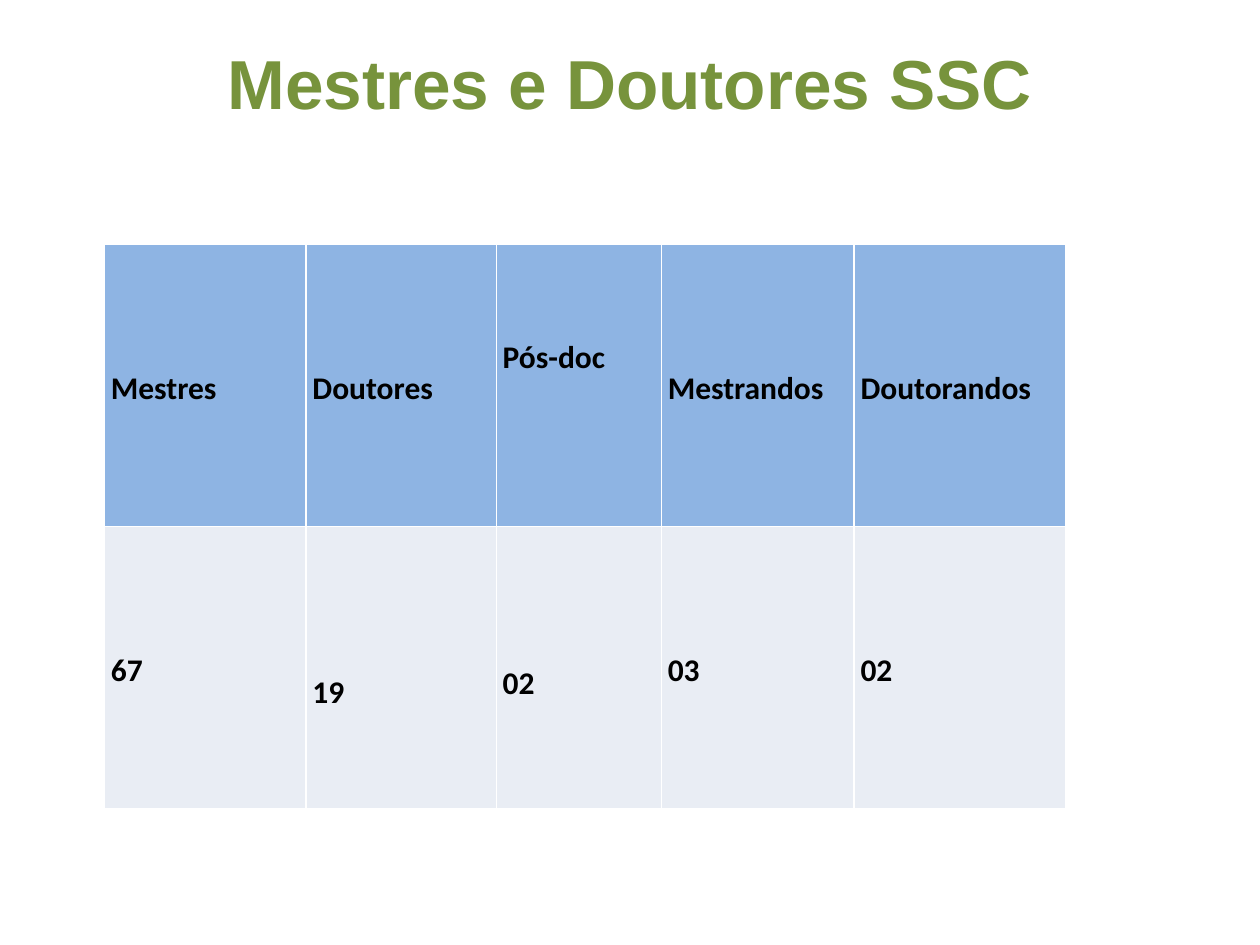
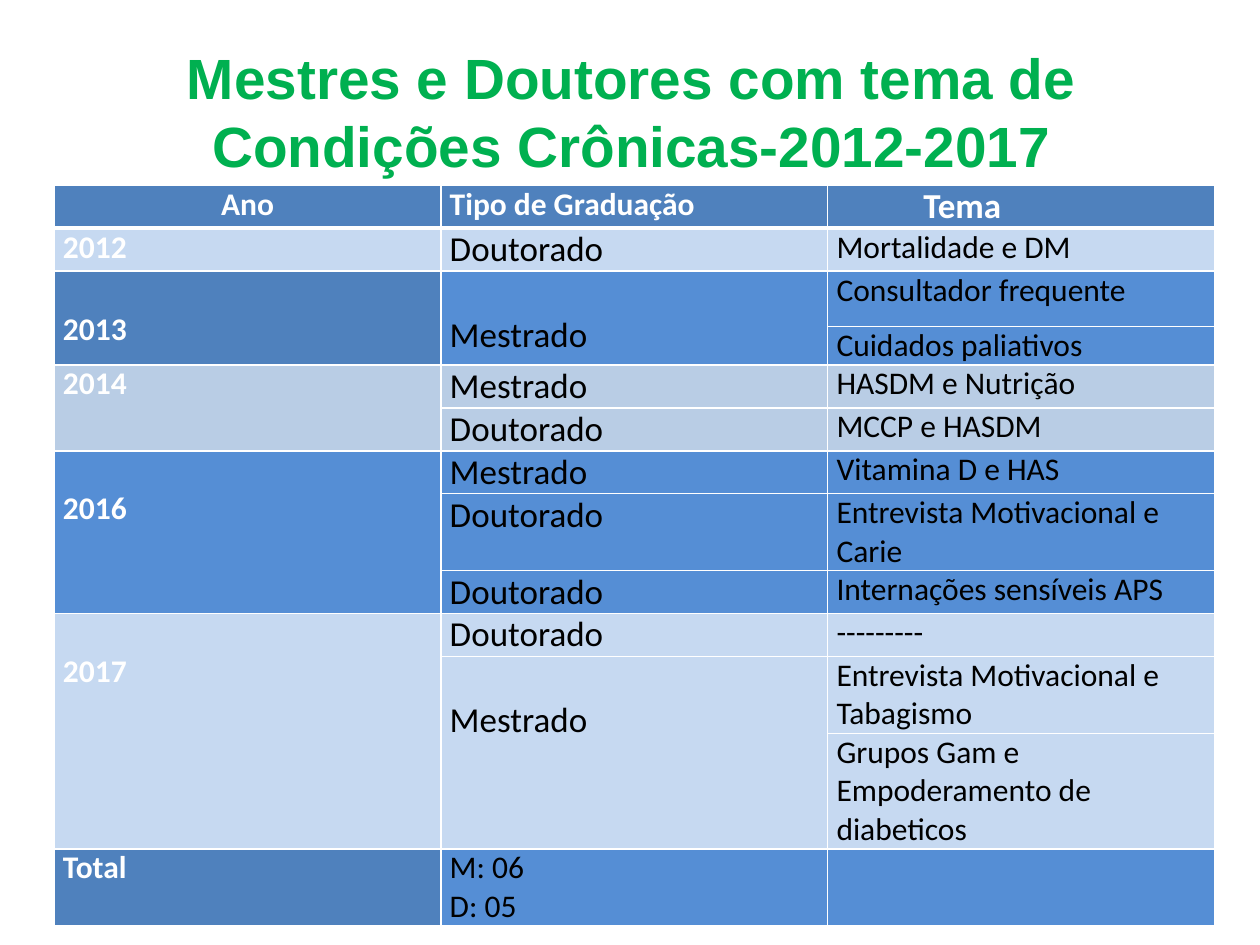
from dataclasses import dataclass

from lxml import etree
from pptx import Presentation
from pptx import util as u
from pptx.dml.color import RGBColor
from pptx.enum import text
from pptx.oxml import ns

Inches = u.Inches

COLORS = {
    "olive": "77933C", "green": "00B050", "white": "FFFFFF", "black": "000000",
    "sky": "8EB4E3", "mist": "E9EDF4", "steel": "4F81BD",
    "pale": "C6D9F1", "blue": "558ED5", "grey_blue": "B9CDE5",
}
TITLE_FONT, TABLE_FONT = "Arial", "Calibri"
LINE_18, LINE_20 = 0.31, 0.34  # heights of one line of table text
SPACED_LINE = 0.35  # one 18 point line at 1.15 spacing


@dataclass
class Title:
    words: str
    left: float
    top: float
    size: float
    color: str
    drop: float


@dataclass
class Cell:
    row: int
    col: int
    words: str
    fill: str
    size: float = 18
    color: str = "black"
    bold: bool = False
    rows: int = 1
    drop: float = 0
    indent: float = 0
    spacing: float = 1.0
    align: text.PP_ALIGN = text.PP_ALIGN.LEFT
    anchor: text.MSO_ANCHOR = text.MSO_ANCHOR.TOP
    under: float = 1


@dataclass
class Grid:
    left: float
    top: float
    widths: list[float]
    heights: list[float]
    inset: float
    cells: list[Cell]


def apply(target, formats: dict) -> None:
    for name, value in formats.items():
        setattr(target, name, value)


def style_font(font, name: str, size: float, color: str, bold: bool) -> None:
    apply(font, {"name": name, "size": u.Pt(size), "bold": bold})
    font.color.rgb = RGBColor.from_string(COLORS[color])


def add_page(deck, title: Title):
    page = deck.slides.add_slide(deck.slide_layouts[5])
    box = page.shapes.title
    apply(box, {"left": Inches(title.left), "top": Inches(title.top),
                "width": Inches(9), "height": Inches(1.25)})
    frame = box.text_frame
    apply(frame, {"word_wrap": True, "auto_size": text.MSO_AUTO_SIZE.NONE,
                  "vertical_anchor": text.MSO_ANCHOR.TOP,
                  "margin_top": Inches(title.drop), "margin_bottom": 0})
    para = frame.paragraphs[0]
    para.alignment = text.PP_ALIGN.CENTER
    span = para.add_run()
    span.text = title.words
    style_font(span.font, TITLE_FONT, title.size, title.color, True)
    return page


def add_borders(table_cell, under: float) -> None:
    """White lines on all four sides; they must precede the fill."""
    properties = table_cell._tc.get_or_add_tcPr()
    sides = {"lnL": 1, "lnR": 1, "lnT": 1, "lnB": under}
    for index, (side, width) in enumerate(sides.items()):
        line = etree.Element(ns.qn(f"a:{side}"), w=str(u.Pt(width)))
        solid = etree.SubElement(line, ns.qn("a:solidFill"))
        etree.SubElement(solid, ns.qn("a:srgbClr"), val=COLORS["white"])
        properties.insert(index, line)


def dress_cell(table_cell, cell: Cell, inset: float) -> None:
    apply(table_cell, {"margin_left": Inches(inset + cell.indent),
                       "margin_right": Inches(inset),
                       "margin_top": Inches(cell.drop), "margin_bottom": 0,
                       "vertical_anchor": cell.anchor})
    table_cell.fill.solid()
    table_cell.fill.fore_color.rgb = RGBColor.from_string(COLORS[cell.fill])
    add_borders(table_cell, cell.under)


def add_grid(page, grid: Grid) -> None:
    table = page.shapes.add_table(
        len(grid.heights), len(grid.widths), Inches(grid.left), Inches(grid.top),
        Inches(sum(grid.widths)), Inches(sum(grid.heights))).table
    for column, width in zip(table.columns, grid.widths):
        column.width = Inches(width)
    for row, height in zip(table.rows, grid.heights):
        row.height = Inches(height)
    for cell in grid.cells:
        first = table.cell(cell.row, cell.col)
        for row in range(cell.row, cell.row + cell.rows):
            dress_cell(table.cell(row, cell.col), cell, grid.inset)
        if cell.rows > 1:
            first.merge(table.cell(cell.row + cell.rows - 1, cell.col))
        first.text = cell.words
        for para in first.text_frame.paragraphs:
            apply(para, {"alignment": cell.align, "line_spacing": cell.spacing})
            style_font(para.font, TABLE_FONT, cell.size, cell.color, cell.bold)
            for span in para.runs:
                style_font(span.font, TABLE_FONT, cell.size, cell.color, cell.bold)


def totals_cells() -> list[Cell]:
    rows = [("sky", ["Mestres", "Doutores", "Pós-doc", "Mestrandos", "Doutorandos"]),
            ("mist", ["67", "19", "02", "03", "02"])]
    drops = {(0, 2): 2 * SPACED_LINE, (1, 1): SPACED_LINE, (1, 2): 3 * SPACED_LINE}
    return [
        Cell(row, col, words, fill, bold=True, spacing=1.15,
             drop=drops.get((row, col), 0),
             anchor=text.MSO_ANCHOR.TOP if col == 2 else text.MSO_ANCHOR.MIDDLE)
        for row, (fill, labels) in enumerate(rows)
        for col, words in enumerate(labels)]


def theme_cells() -> list[Cell]:
    heading = {"fill": "steel", "color": "white", "bold": True, "under": 3}
    cells = [Cell(0, 0, "Ano", align=text.PP_ALIGN.CENTER, **heading),
             Cell(0, 1, "Tipo de Graduação", **heading),
             Cell(0, 2, "Tema", size=20, indent=0.69, **heading)]

    # Year, fill of the year, fill of the rest, drop, degrees with their themes
    years = [
        ("2012", "pale", "pale", 0, [("Doutorado", ["Mortalidade e DM"])]),
        ("2013", "steel", "blue", LINE_18,
         [("Mestrado", ["Consultador frequente", "Cuidados paliativos"])]),
        ("2014", "grey_blue", "grey_blue", 0,
         [("Mestrado", ["HASDM e Nutrição"]), ("Doutorado", ["MCCP e HASDM"])]),
        ("2016", "blue", "blue", LINE_18,
         [("Mestrado", ["Vitamina D e HAS"]),
          ("Doutorado", ["Entrevista Motivacional e Carie"]),
          ("Doutorado", ["Internações sensíveis APS"])]),
        ("2017", "pale", "pale", LINE_18,
         [("Doutorado", ["---------"]),
          ("Mestrado", ["Entrevista Motivacional e Tabagismo",
                        "Grupos Gam e Empoderamento de diabeticos"])]),
    ]
    row = 1
    for year, year_fill, fill, drop, degrees in years:
        count = sum(len(themes) for _, themes in degrees)
        cells.append(Cell(row, 0, year, year_fill, color="white", bold=True,
                          rows=count, drop=drop))
        for degree, themes in degrees:
            cells.append(Cell(row, 1, degree, fill, size=20, rows=len(themes),
                              drop=LINE_20 if len(themes) > 1 else 0))
            for theme in themes:
                cells.append(Cell(row, 2, theme, fill))
                row += 1

    cells += [Cell(row, 0, "Total", "steel", color="white", bold=True),
              Cell(row, 1, "M: 06\nD: 05", "blue"),
              Cell(row, 2, "", "blue")]
    return cells


def main() -> None:
    deck = Presentation()
    apply(deck, {"slide_width": Inches(10), "slide_height": Inches(7.5)})

    # Totals of masters and doctors
    page = add_page(deck, Title("Mestres e Doutores SSC", 0.5, 0.3, 39.6, "olive", 0.02))
    add_grid(page, Grid(0.83, 1.94, [1.6, 1.51, 1.31, 1.53, 1.68], [2.24] * 2,
                        0.05, totals_cells()))

    # Themes by year
    page = add_page(deck, Title(
        "Mestres e Doutores com tema de Condições Crônicas-2012-2017",
        0.51, 0.21, 32.4, "green", 0.13))
    heights = [0.3] * 2 + [0.44] + [0.3] * 4 + [0.61] + [0.3] * 2 + [0.61, 0.91, 0.61]
    add_grid(page, Grid(0.43, 1.47, [3.07] * 3, heights, 0.07, theme_cells()))

    deck.save("out.pptx")


if __name__ == "__main__":
    main()
